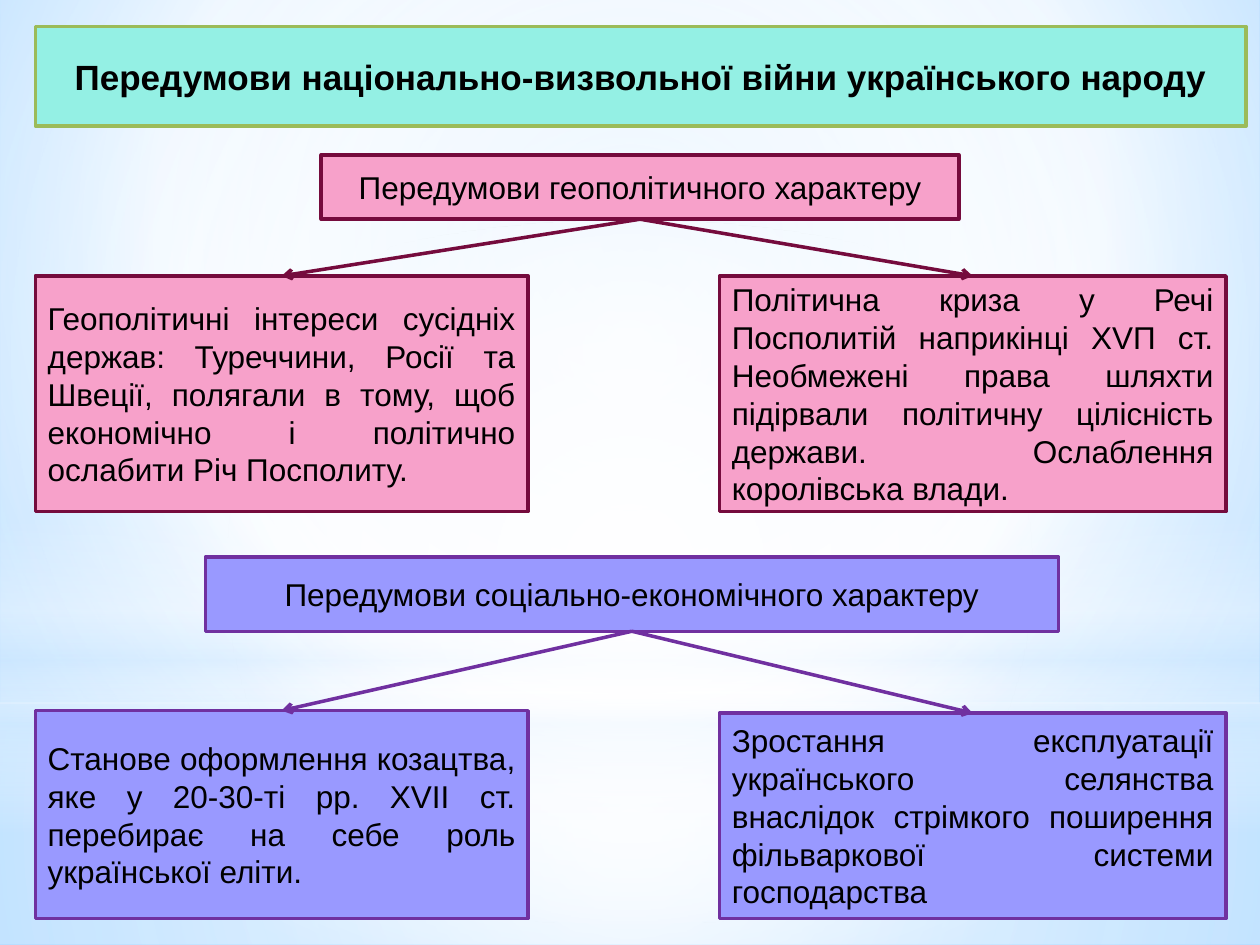
from pptx import Presentation, util as u
from pptx.dml.color import RGBColor
from pptx.enum import shapes, text
from pptx.oxml import parse_xml
from pptx.oxml.ns import nsdecls, qn

THEME = {
    "font": "Arial", "ink": "000000", "line": 2, "body": 18, "head": 20,
    "mint": ("94F0E4", "9BBB59"),
    "pink": ("F7A1CA", "750B3D"),
    "violet": ("9999FF", "7030A0"),
}
TITLE = ("Передумови національно-визвольної війни українського народу",
         (0.28, 0.21, 9.61, 0.79))
# Each group: palette, (heading, box), then the (text, box) of its branches
GROUPS = [
    ("pink",
     ("Передумови геополітичного характеру", (2.55, 1.23, 5.06, 0.51)),
     [("Геополітичні інтереси сусідніх держав: Туреччини, Росії та Швеції, "
       "полягали в тому, щоб економічно і політично ослабити Річ Посполиту.",
       (0.28, 2.19, 3.91, 1.87)),
      ("Політична криза у Речі Посполитій наприкінці ХVП ст. Необмежені права "
       "шляхти підірвали політичну цілісність держави. Ослаблення королівська "
       "влади.",
       (5.71, 2.19, 4.02, 1.87))]),
    ("violet",
     ("Передумови соціально-економічного характеру", (1.63, 4.42, 6.77, 0.59)),
     [("Станове оформлення козацтва, яке у 20-30-ті рр. XVII ст. перебирає на "
       "себе роль української еліти.",
       (0.28, 5.64, 3.91, 1.65)),
      ("Зростання експлуатації українського селянства внаслідок стрімкого "
       "поширення фільваркової системи господарства",
       (5.71, 5.66, 4.02, 1.63))]),
]
# Gradients: stops of (position, colour, opacity), focus rectangle or None
MID = (50, 50, 50, 50)
SKY = ([(0, "C2E3FF", 100), (60, "FFFFFF", 100), (100, "79C1FF", 100)],
       (20, 10, 20, 60))
GLOWS = [
    ("RECTANGLE", (0, 5.58, 10, 1.92),
     [(0, "FFFFFF", 91), (37, "FFFFFF", 76), (100, "D6ECFF", 79)], MID),
    ("RECTANGLE", (0, 0, 10, 5.58),
     [(0, "FFFFFF", 89), (48, "FFFFFF", 62), (100, "D6ECFF", 79)], MID),
    ("RECTANGLE", (0, 4.12, 10, 2.5),
     [(0, "FFFFFF", 0), (29, "FFFFFF", 30), (45, "D6ECFF", 40),
      (55, "FFFFFF", 26), (65, "D6ECFF", 60), (100, "FFFFFF", 0)], None),
    ("OVAL", (0, 1.75, 10, 5.58),
     [(0, "FFFFFF", 100), (56, "FFFFFF", 0)], MID),
]


def color(name):
    return RGBColor.from_string(name)


def blend(host, stops, focus):
    """Swap the solid fill of host for a gradient, round if it has a focus."""
    marks = "".join(
        f'<a:gs pos="{pos * 1000}"><a:srgbClr val="{tint}">'
        f'<a:alpha val="{alpha * 1000}"/></a:srgbClr></a:gs>'
        for pos, tint, alpha in stops)
    if focus:
        sides = " ".join(f'{k}="{v * 1000}"' for k, v in zip("ltrb", focus))
        way = f'<a:path path="circle"><a:fillToRect {sides}/></a:path>'
    else:
        way = '<a:lin ang="5400000" scaled="0"/>'
    grad = parse_xml(f'<a:gradFill {nsdecls("a")} rotWithShape="1">'
                     f'<a:gsLst>{marks}</a:gsLst>{way}</a:gradFill>')
    host.replace(host.find(qn("a:solidFill")), grad)


def add_form(slide, kind, area, fill):
    form = slide.shapes.add_shape(getattr(shapes.MSO_SHAPE, kind),
                                  *map(u.Inches, area))
    form.shadow.inherit = False
    form.fill.solid()
    form.fill.fore_color.rgb = color(fill)
    return form


def add_box(slide, words, area, skin, align, size, bold=False):
    fill, edge = THEME[skin]
    box = add_form(slide, "ROUNDED_RECTANGLE", area, fill)
    box.adjustments[0] = 0
    box.line.color.rgb = color(edge)
    box.line.width = u.Pt(THEME["line"])
    frame = box.text_frame
    frame.word_wrap = True
    frame.vertical_anchor = text.MSO_ANCHOR.MIDDLE
    para = frame.paragraphs[0]
    para.alignment = align
    run = para.add_run()
    run.text = words
    run.font.name = THEME["font"]
    run.font.size = u.Pt(size)
    run.font.bold = bold
    run.font.color.rgb = color(THEME["ink"])
    return box


def add_arrow(slide, head, leaf, skin):
    """Join the bottom centre of head to the top centre of leaf."""
    arrow = slide.shapes.add_connector(
        shapes.MSO_CONNECTOR.STRAIGHT, 0, 0, 0, 0)
    arrow.begin_connect(head, 2)
    arrow.end_connect(leaf, 0)
    arrow.line.color.rgb = color(THEME[skin][1])
    arrow.line.width = u.Pt(THEME["line"])
    arrow.line._get_or_add_ln().append(
        parse_xml(f'<a:tailEnd {nsdecls("a")} type="arrow"/>'))
    arrow.element.spPr.append(parse_xml(f'<a:effectLst {nsdecls("a")}/>'))


def main():
    deck = Presentation()
    deck.slide_width, deck.slide_height = u.Inches(10), u.Inches(7.5)
    slide = deck.slides.add_slide(deck.slide_layouts[6])
    slide.background.fill.solid()
    blend(slide.element.find(".//" + qn("p:bgPr")), *SKY)
    for kind, area, stops, focus in GLOWS:
        glow = add_form(slide, kind, area, "FFFFFF")
        glow.line.fill.background()
        blend(glow.element.spPr, stops, focus)

    mid, full = text.PP_ALIGN.CENTER, text.PP_ALIGN.JUSTIFY
    add_box(slide, *TITLE, "mint", mid, THEME["head"], True)
    for skin, top, leaves in GROUPS:
        head = add_box(slide, *top, skin, mid, THEME["body"])
        for leaf in leaves:
            box = add_box(slide, *leaf, skin, full, THEME["body"])
            add_arrow(slide, head, box, skin)
    deck.save("out.pptx")


if __name__ == "__main__":
    main()
